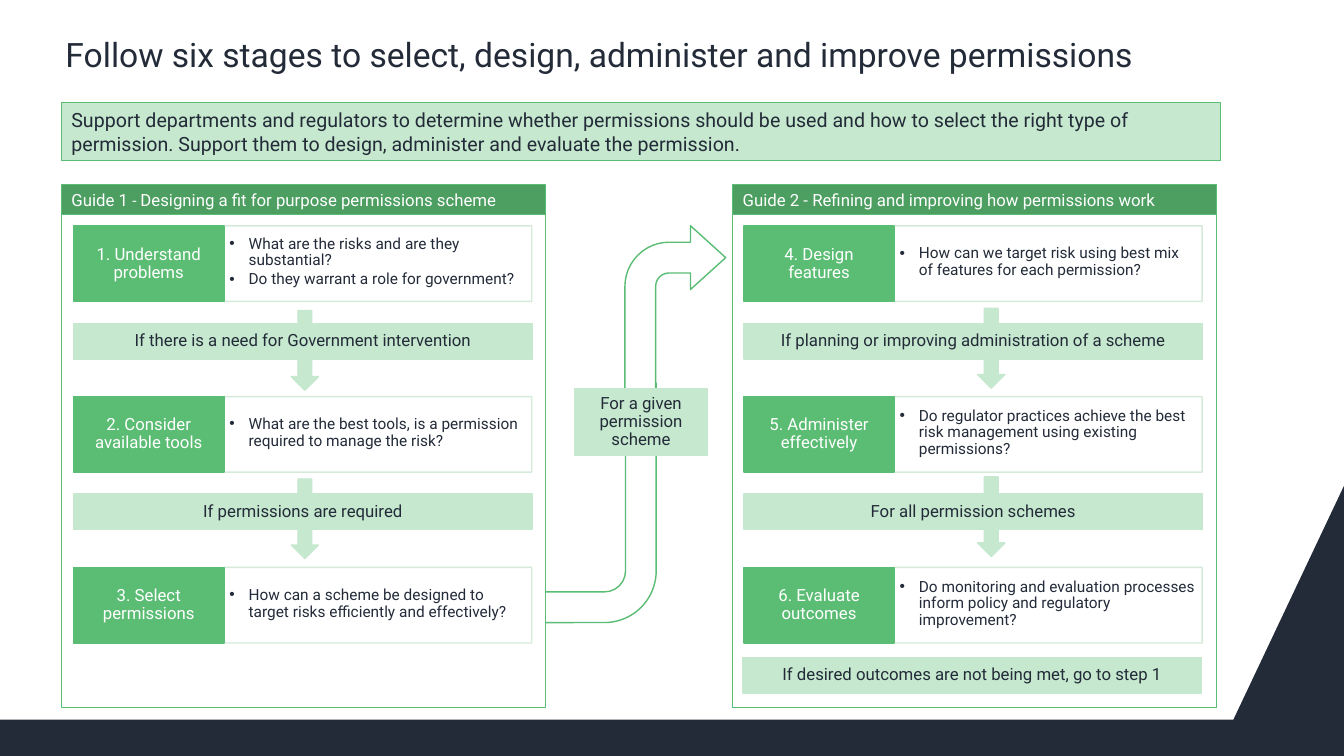
from lxml.etree import SubElement
from pptx import Presentation
from pptx.dml.color import RGBColor
from pptx.enum.shapes import MSO_SHAPE
from pptx.enum.text import MSO_ANCHOR, PP_ALIGN
from pptx.oxml.ns import qn
from pptx.util import Pt

COLORS = {
    "navy": "232B39", "white": "FFFFFF", "pale": "C6E8CE",
    "green": "5BBD74", "header": "4C9E61", "outline": "D2E8D6",
}
MARGINS = ("margin_left", "margin_top", "margin_right", "margin_bottom")
CENTERED = {"alignment": PP_ALIGN.CENTER, "line_spacing": 0.9, "space_after": Pt(4.2)}
BULLETED = {"alignment": PP_ALIGN.LEFT, "line_spacing": 0.9, "space_after": Pt(1.65)}
PLAIN = {"alignment": PP_ALIGN.LEFT}


class SlideBuilder:
    font = "Roboto"
    box_insets = (7.2, 4.3, 7.2, 4.3)
    default_insets = (7.2, 3.6, 7.2, 3.6)
    bullet_insets = (4.3, 4.3, 4.3, 6.5)

    def __init__(self, slide):
        self.slide = slide

    def paint(self, shape, fill, line, weight):
        shape.shadow.inherit = False
        if fill:
            shape.fill.solid()
            shape.fill.fore_color.rgb = RGBColor.from_string(COLORS[fill])
        else:
            shape.fill.background()
        if line:
            shape.line.color.rgb = RGBColor.from_string(COLORS[line])
            shape.line.width = Pt(weight)
        else:
            shape.line.fill.background()

    def shape(self, kind, bounds, fill, line, weight=1, adjustments=(), rotation=0):
        shape = self.slide.shapes.add_shape(kind, *map(Pt, bounds))
        self.paint(shape, fill, line, weight)
        for index, value in enumerate(adjustments):
            shape.adjustments[index] = value
        shape.rotation = rotation
        return shape

    def rectangle(self, bounds, fill, line, weight=1):
        return self.shape(MSO_SHAPE.RECTANGLE, bounds, fill, line, weight)

    def outline(self, points, fill):
        builder = self.slide.shapes.build_freeform(*points[0], scale=Pt(1))
        builder.add_line_segments(points[1:], close=True)
        self.paint(builder.convert_to_shape(), fill, None, 0)

    def text(self, shape, paragraphs, size, color, layout, insets,
             anchor=MSO_ANCHOR.MIDDLE):
        """Each paragraph is a list of (text, size) runs or a plain string."""
        frame = shape.text_frame
        settings = {"word_wrap": True, "vertical_anchor": anchor}
        settings.update(zip(MARGINS, map(Pt, insets)))
        for name, value in settings.items():
            setattr(frame, name, value)
        for index, content in enumerate(paragraphs):
            paragraph = frame.add_paragraph() if index else frame.paragraphs[0]
            for name, value in layout.items():
                setattr(paragraph, name, value)
            runs = [(content, size)] if isinstance(content, str) else content
            for words, run_size in runs:
                run = paragraph.add_run()
                run.text = words
                run.font.name = self.font
                run.font.size = Pt(run_size)
                run.font.color.rgb = RGBColor.from_string(COLORS[color])

    def title(self, bounds, words):
        box = self.slide.shapes.add_textbox(*map(Pt, bounds))
        self.text(box, [words], 24, "navy", {"line_spacing": 0.9}, (2.9, 3.6, 2.9, 3.6))

    def label(self, bounds, words, fill="pale", color="navy"):
        box = self.rectangle(bounds, fill, fill)
        self.text(box, [words], 12, color, CENTERED, self.box_insets)

    def questions(self, bounds, items):
        box = self.rectangle(bounds, "white", "outline")
        line_color = box.line._ln.find(".//" + qn("a:srgbClr"))
        SubElement(line_color, qn("a:alpha"), val="90000")
        self.text(box, items, 11, "navy", BULLETED, self.bullet_insets)
        for paragraph in box.text_frame.paragraphs:
            properties = paragraph._p.get_or_add_pPr()
            properties.set("marL", str(Pt(13.7)))
            properties.set("indent", str(-Pt(13.7)))
            SubElement(properties, qn("a:buFont"), typeface="Arial")
            SubElement(properties, qn("a:buChar"), char="•")

    def stage(self, left, top, name, items):
        self.questions((left + 107, top, 220.3, 54), items)
        self.label((left, top, 107.3, 54), name, "green", "white")

    def condition(self, left, top, arrow_left, arrow_top, words):
        self.shape(MSO_SHAPE.DOWN_ARROW, (arrow_left, arrow_top, 19.4, 56.9),
                   "pale", "pale", adjustments=(0.508, 0.5))
        self.label((left, top, 327.6, 25.4), words)

    def guide(self, left, inset, arrow_left, arrow_top, heading, stages, conditions):
        self.rectangle((left, 150.5, 345.6, 355), None, "green", 0.75)
        header = self.rectangle((left, 131.8, 345.6, 21.6), "header", "green", 0.75)
        self.text(header, [heading], 12, "white", PLAIN, self.default_insets,
                  MSO_ANCHOR.TOP)
        for row, (name, items) in enumerate(stages):
            self.stage(left + inset, 161.3 + 122 * row, name, items)
        for row, words in enumerate(conditions):
            self.condition(left + inset, 231.1 + 121.7 * row,
                           arrow_left, arrow_top + 120.3 * row, words)


def main():
    presentation = Presentation()
    presentation.slide_width, presentation.slide_height = Pt(960), Pt(540)
    slide = presentation.slides.add_slide(presentation.slide_layouts[6])
    builder = SlideBuilder(slide)

    # Footer band, title and summary
    builder.outline([(881.3, 514), (0, 514), (0, 540), (960, 540), (960, 347)], "navy")
    builder.title((43.9, 0, 828, 81.4),
                  "Follow six stages to select, design, administer and improve permissions")
    summary = builder.rectangle((43.9, 73.6, 828, 41), "pale", "green", 0.75)
    builder.text(summary, [
        "Support departments and regulators to determine whether permissions should be "
        "used and how to select the right type of permission. Support them to design, "
        "administer and evaluate the permission."], 14, "navy", PLAIN, builder.default_insets)

    # Path from guide 1 to guide 2, its start tucked under a white panel
    builder.shape(MSO_SHAPE.BENT_ARROW, (319.7, 273.6, 149, 186.5), "white", "green",
                  adjustments=(0.147, 0.177, 0.393, 0.248), rotation=180)
    builder.rectangle((43.9, 150.5, 345.6, 355), "white", None)
    builder.shape(MSO_SHAPE.BENT_ARROW, (446.4, 161.3, 72, 125.3), "white", "green",
                  adjustments=(0.305, 0.316, 0.349, 0.438))
    builder.label((410.4, 277.9, 95, 47.2), "For a given permission scheme")

    # Guide 1
    builder.guide(
        43.9, 8.7, 208.1, 221.8,
        [("Guide 1 ", 12), ("- ", 11),
         ("Designing a fit for purpose permissions scheme", 12)],
        [("1. Understand problems", ["What are the risks and are they substantial?",
                                     "Do they warrant a role for government?"]),
         ("2. Consider available tools",
          ["What are the best tools, is a permission required to manage the risk?"]),
         ("3. Select permissions",
          ["How can a scheme be designed to target risks efficiently and effectively?"])],
        ["If there is a need for Government intervention", "If permissions are required"])

    # Guide 2
    builder.guide(
        523.4, 8, 698.4, 220.3,
        "Guide 2 - Refining and improving how permissions work",
        [("4. Design features",
          ["How can we target risk using best mix of features for each permission?"]),
         ("5. Administer effectively",
          ["Do regulator practices achieve the best risk management using existing "
           "permissions?"]),
         ("6. Evaluate outcomes",
          ["Do monitoring and evaluation processes inform policy and regulatory "
           "improvement?"])],
        ["If planning or improving administration of a scheme",
         "For all permission schemes"])
    builder.label((530.6, 469.6, 327.6, 25.4),
                  "If desired outcomes are not being met, go to step 1")

    presentation.save("out.pptx")


if __name__ == "__main__":
    main()
